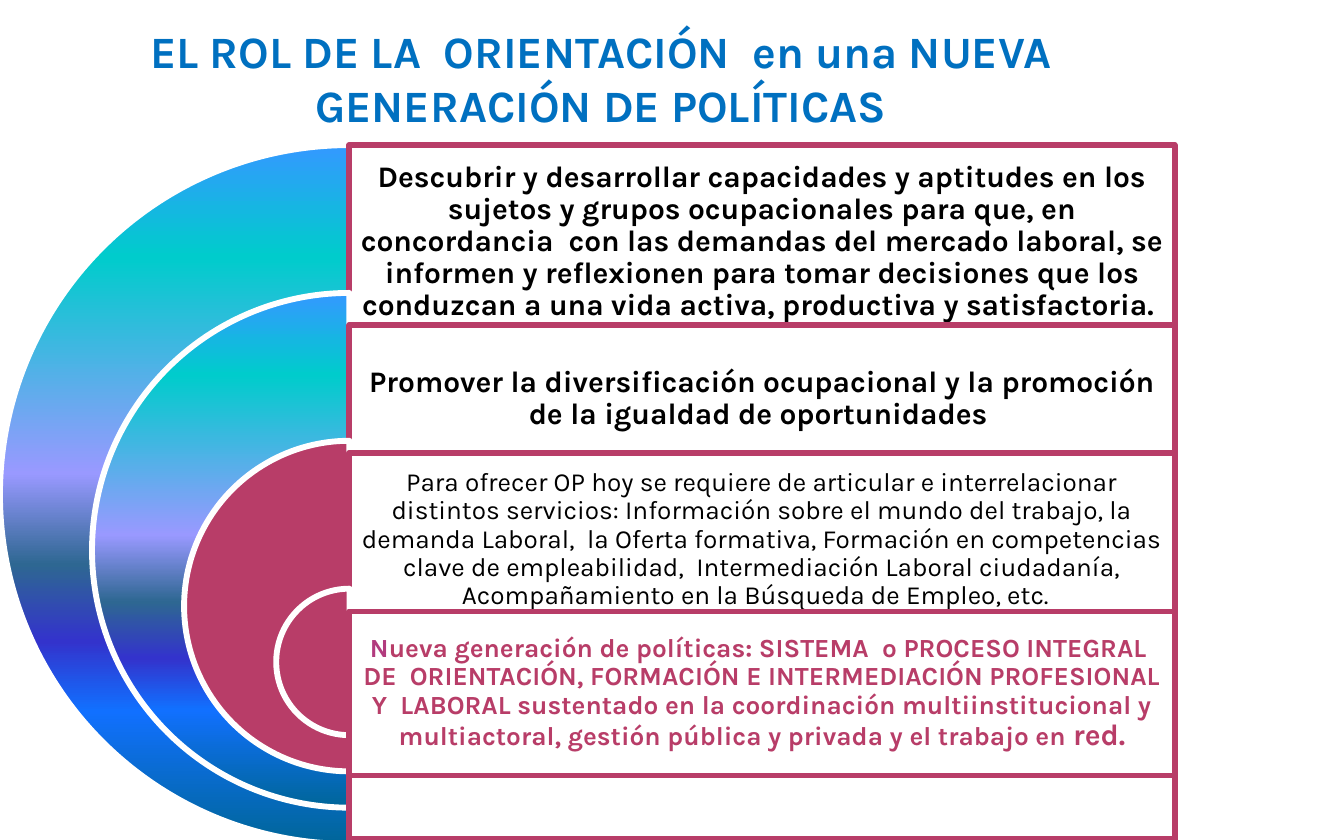
from dataclasses import dataclass

from lxml.etree import SubElement as Sub
from pptx import Presentation as Deck
from pptx.dml.color import RGBColor as RGB
from pptx.enum.shapes import MSO_SHAPE as Kind
from pptx.enum.text import MSO_ANCHOR as Anchor, PP_ALIGN as Align
from pptx.oxml.ns import qn
from pptx.util import Inches as In, Pt


@dataclass(frozen=True)
class Theme:
    font: str = "Karla"
    white: str = "FFFFFF"
    black: str = "000000"
    blue: str = "0070C0"
    rose: str = "B83D68"
    plum: str = "B23B7E"
    head: int = 24
    large: int = 16
    small: int = 14
    edge: float = 3.15
    alpha: int = 90
    blend: tuple = ((0, "3399FF"), (16, "00CCCC"), (47, "9999FF"), (60, "2E6792"),
                    (71, "3333CC"), (81, "1170FF"), (100, "006699"))


def assign(item, form):
    for key, value in form.items():
        setattr(item, key, value)


class Page:
    """Draw styled elements on one slide."""

    def __init__(self, slide, theme):
        self.slide, self.theme = slide, theme

    def shape(self, kind, area, edge):
        item = self.slide.shapes.add_shape(kind, *map(In, area))
        item.shadow.inherit = False
        item.line.color.rgb = RGB.from_string(edge)
        item.line.width = Pt(self.theme.edge)
        return item

    def solid(self, item, color):
        item.fill.solid()
        item.fill.fore_color.rgb = RGB.from_string(color)

    def blend(self, item):
        item.fill.gradient()
        item.fill.gradient_angle = 270
        stops = item._element.spPr.find(".//" + qn("a:gsLst"))
        for old in list(stops):
            stops.remove(old)
        for place, color in self.theme.blend:
            stop = Sub(stops, qn("a:gs"), pos=str(place * 1000))
            Sub(stop, qn("a:srgbClr"), val=color)

    def arc(self, mid, top, size, mixed):
        item = self.shape(Kind.PIE, (mid - size / 2, top, size, size), self.theme.white)
        item.adjustments[0], item.adjustments[1] = 54, 162
        if mixed:
            self.blend(item)
        else:
            self.solid(item, self.theme.rose)

    def panel(self, area):
        item = self.shape(Kind.RECTANGLE, area, self.theme.rose)
        self.solid(item, self.theme.white)
        tint = item._element.spPr.find(qn("a:solidFill"))[0]
        Sub(tint, qn("a:alpha"), val=str(self.theme.alpha * 1000))

    def text(self, area, runs, frame, para):
        box = self.slide.shapes.add_textbox(*map(In, area)).text_frame
        assign(box, {"word_wrap": True, **frame})
        line = box.paragraphs[0]
        assign(line, {"alignment": Align.CENTER, **para})
        for words, size, color, bold in runs:
            run = line.add_run()
            run.text = words
            assign(run.font, {"name": self.theme.font, "size": Pt(size), "bold": bold})
            run.font.color.rgb = RGB.from_string(color)


def main():
    deck = Deck()
    assign(deck, {"slide_width": In(10), "slide_height": In(6.25)})
    theme = Theme()
    page = Page(deck.slides.add_slide(deck.slide_layouts[6]), theme)

    page.text((0, 0.13, 8.94, 0.91), [
        ("EL ROL DE LA  ORIENTACIÓN  en una NUEVA GENERACIÓN DE POLÍTICAS",
         theme.head, theme.blue, True)], {}, {})

    mid, wide = 2.6, 6.14
    first, drop, size, shrink = 1.08, 1.1, 5.2, 1.37
    levels = [
        (1.08, 5.2, 1.44, 0.07, [
            ("Descubrir y desarrollar capacidades y aptitudes en los sujetos y grupos "
             "ocupacionales para que, en concordancia  con las demandas del mercado laboral, "
             "se informen y reflexionen para tomar decisiones que los conduzcan a una vida "
             "activa, productiva y satisfactoria. ", theme.large, theme.black, True)]),
        (2.42, 3.83, 1.1, 0.07, [
            ("Promover la diversificación ocupacional y la promoción de la igualdad de "
             "oportunidades ", theme.large, theme.black, True)]),
        (3.37, 2.87, 1.29, 0.06, [
            ("Para ofrecer OP hoy se requiere de articular e interrelacionar distintos "
             "servicios: Información sobre el mundo del trabajo, la demanda Laboral,  la "
             "Oferta formativa, Formación en competencias clave de empleabilidad,  "
             "Intermediación Laboral ciudadanía, Acompañamiento en la Búsqueda de Empleo, "
             "etc.  ", theme.small, theme.black, False)]),
        (4.55, 1.22, 1.22, 0.06, [
            ("N", theme.small, theme.plum, True),
            ("ueva generación de políticas: SISTEMA  o PROCESO INTEGRAL  DE  ORIENTACIÓN, "
             "FORMACIÓN E INTERMEDIACIÓN PROFESIONAL Y  LABORAL sustentado en la "
             "coordinación multiinstitucional y multiactoral, gestión pública y privada y "
             "el trabajo en ", theme.small, theme.rose, True),
            ("red.", theme.large, theme.rose, True)]),
    ]
    for rank, (top, tall, room, pad, runs) in enumerate(levels):
        page.arc(mid, first + rank * drop, size - rank * shrink, rank < 2)
        page.panel((mid, top, wide, tall))
        sides = ("left", "right", "top", "bottom")
        frame = {f"margin_{side}": In(pad) for side in sides}
        page.text((mid, top, wide, room), runs,
                  {"vertical_anchor": Anchor.MIDDLE, **frame}, {"line_spacing": 0.9})

    deck.save("out.pptx")


if __name__ == "__main__":
    main()
